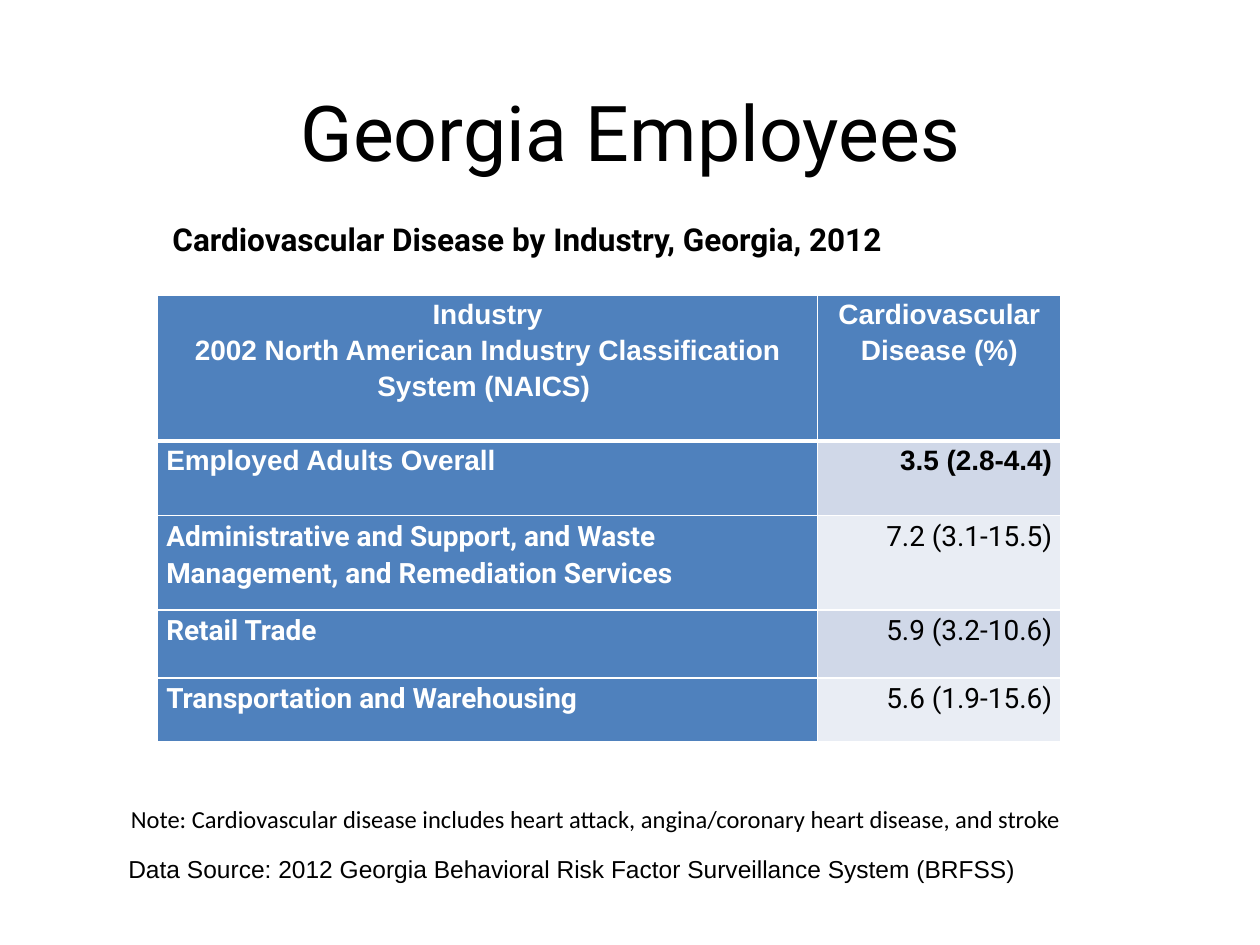
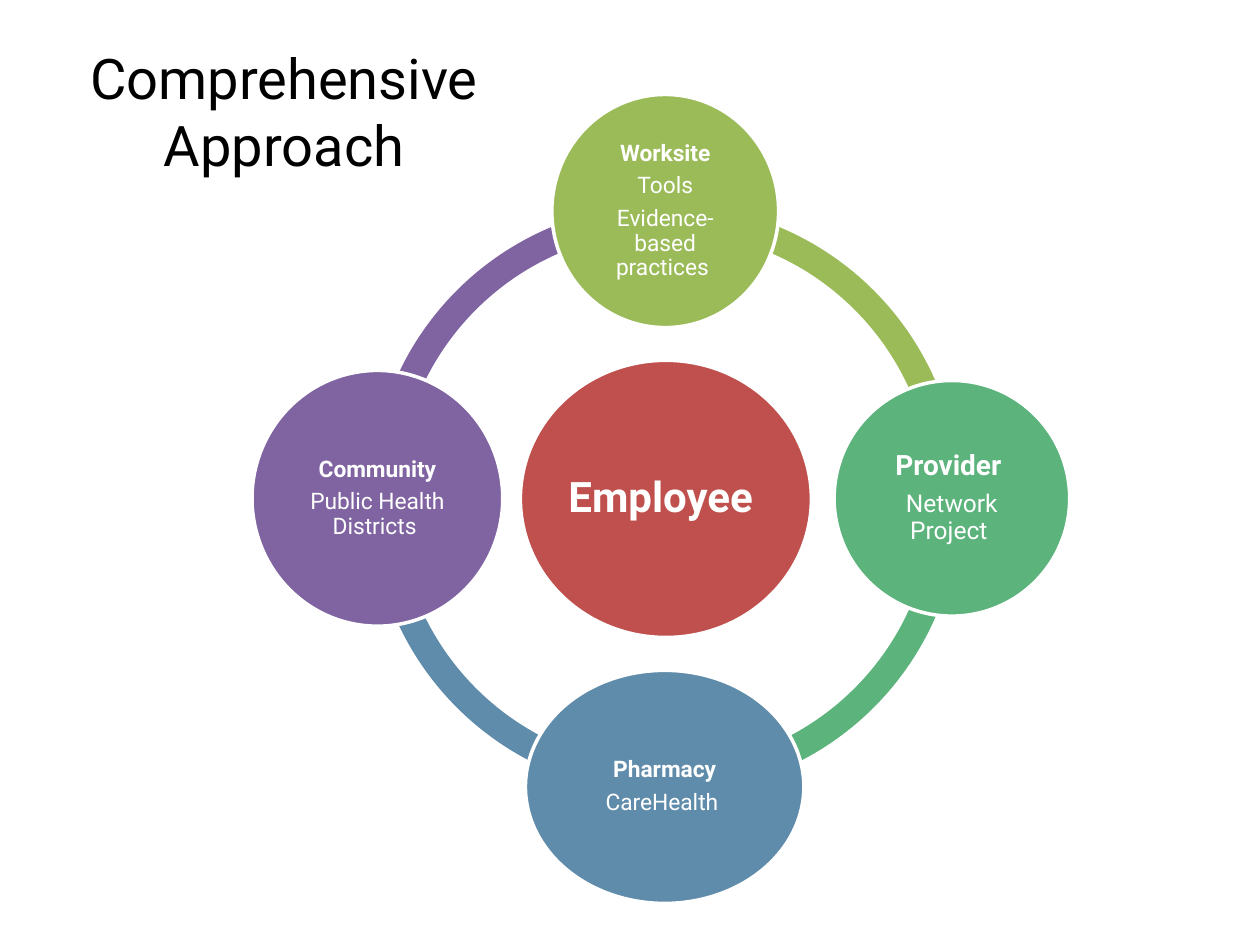
"""Builds two slides on cardiovascular disease among Georgia employees."""
from dataclasses import dataclass

from lxml import etree
from pptx import Presentation
from pptx import util as u
from pptx.dml import color
from pptx.enum import shapes, text
from pptx.oxml import ns

Inches = u.Inches
ALIGN = text.PP_ALIGN

COLORS = {
    "ink": "000000",
    "white": "FFFFFF",
    "header": "4F81BD",
    "band_dark": "D0D8E8",
    "band_light": "E9EDF4",
    "employee": "C0504D",
    "worksite": "9BBB59",
    "provider": "5CB37C",
    "pharmacy": "608CAB",
    "community": "8064A2",
}


@dataclass(frozen=True)
class Style:
    size: float
    font: str = "Roboto"
    color: str = "ink"
    bold: bool = False


@dataclass(frozen=True)
class Caption:
    wording: str
    box: tuple[float, float, float, float]
    style: Style


@dataclass(frozen=True)
class Industry:
    name: str
    rate: str
    height: float
    font: str = "Roboto"
    bold_rate: bool = False


@dataclass(frozen=True)
class Partner:
    lines: tuple[str, ...]
    box: tuple[float, float, float, float]
    color: str
    heading_size: float = 13
    detail_size: float = 13


CAPTIONS = (
    Caption("Cardiovascular Disease by Industry, Georgia, 2012",
            (1.27, 1.7, 6.58, 0.4), Style(18, bold=True)),
    Caption("Note: Cardiovascular disease includes heart attack, "
            "angina/coronary heart disease, and stroke",
            (0.94, 6.33, 7.71, 0.34), Style(14, "Calibri")),
    Caption("Data Source: 2012 Georgia Behavioral Risk Factor "
            "Surveillance System (BRFSS)",
            (0.92, 6.73, 8.33, 0.34), Style(14, "Arial")),
)

TABLE_HEADINGS = (
    "Industry\n2002 North American Industry Classification System (NAICS) ",
    "Cardiovascular Disease (%)",
)
COLUMN_WIDTHS = (5.24, 1.93)
HEADER_HEIGHT = 1.16
INDUSTRIES = (
    Industry("Employed Adults Overall", "3.5 (2.8-4.4)", 0.59, "Arial", True),
    Industry("Administrative and Support, and Waste Management, "
             "and Remediation Services", "7.2 (3.1-15.5)", 0.75),
    Industry("Retail Trade", "5.9 (3.2-10.6)", 0.54),
    Industry("Transportation and Warehousing", "5.6 (1.9-15.6)", 0.51),
)

RING_BOX = (2.94, 1.62, 4.68, 4.68)
RING_THICKNESS = 0.046
RING_COLORS = ("provider", "pharmacy", "community", "worksite")
PARTNERS = (
    Partner(("Employee ",), (4.13, 2.86, 2.31, 2.2), "employee", 24),
    Partner(("Worksite", "Tools", "Evidence-based practices "),
            (4.38, 0.75, 1.8, 1.85), "worksite"),
    Partner(("Provider ", "Network Project "),
            (6.62, 3.02, 1.87, 1.87), "provider", 16, 14),
    Partner(("Pharmacy", "CareHealth "),
            (4.17, 5.32, 2.21, 1.85), "pharmacy"),
    Partner(("Community", "Public Health Districts "),
            (2, 2.94, 1.99, 2.03), "community"),
)


def rgb(name: str) -> color.RGBColor:
    """Return the named palette colour."""
    return color.RGBColor.from_string(COLORS[name])


def inches(box: tuple[float, ...]) -> list[int]:
    """Convert a box to lengths."""
    return [Inches(value) for value in box]


def style_paragraph(paragraph, style: Style, align: ALIGN) -> None:
    """Align a paragraph and format its runs."""
    paragraph.alignment = align
    for run in paragraph.runs:
        run.font.size = u.Pt(style.size)
        run.font.name = style.font
        run.font.bold = style.bold
        run.font.color.rgb = rgb(style.color)


def add_titled_slide(deck, title: str, box: tuple[float, ...], size: float):
    """Add a slide with a placed, centred title."""
    slide = deck.slides.add_slide(deck.slide_layouts[5])
    heading = slide.shapes.title
    heading.left, heading.top, heading.width, heading.height = inches(box)
    heading.text_frame.text = title
    heading.text_frame.vertical_anchor = text.MSO_ANCHOR.MIDDLE
    style_paragraph(heading.text_frame.paragraphs[0], Style(size), ALIGN.CENTER)
    return slide


def add_caption(slide, caption: Caption) -> None:
    """Add one line of text above or below the table."""
    frame = slide.shapes.add_textbox(*inches(caption.box)).text_frame
    frame.word_wrap = True
    frame.text = caption.wording
    style_paragraph(frame.paragraphs[0], caption.style, ALIGN.LEFT)


def set_borders(cell, top: float, bottom: float) -> None:
    """Draw white cell borders with the given top and bottom widths."""
    properties = cell._tc.get_or_add_tcPr()
    for side, width in (("L", 1), ("R", 1), ("T", top), ("B", bottom)):
        line = etree.SubElement(properties, ns.qn(f"a:ln{side}"), w=str(u.Pt(width)))
        fill = etree.SubElement(line, ns.qn("a:solidFill"))
        etree.SubElement(fill, ns.qn("a:srgbClr"), val=COLORS["white"])


def fill_cell(cell, wording: str, fill: str, style: Style, align: ALIGN,
              top: float = 1, bottom: float = 1) -> None:
    """Write and format one table cell."""
    set_borders(cell, top, bottom)
    cell.fill.solid()
    cell.fill.fore_color.rgb = rgb(fill)
    cell.margin_left = cell.margin_right = Inches(0.07)
    cell.margin_top = cell.margin_bottom = 0
    cell.text_frame.text = wording
    for paragraph in cell.text_frame.paragraphs:
        paragraph.line_spacing = 1.15
        style_paragraph(paragraph, style, align)


def add_industry_table(slide) -> None:
    """Add the table of disease rates by industry."""
    heights = (HEADER_HEIGHT, *(industry.height for industry in INDUSTRIES))
    table = slide.shapes.add_table(
        len(heights), len(COLUMN_WIDTHS),
        *inches((1.25, 2.34, sum(COLUMN_WIDTHS), sum(heights)))).table
    for column, width in zip(table.columns, COLUMN_WIDTHS):
        column.width = Inches(width)
    for row, height in zip(table.rows, heights):
        row.height = Inches(height)
    for index, heading in enumerate(TABLE_HEADINGS):
        fill_cell(table.cell(0, index), heading, "header",
                  Style(16, "Arial", "white", True), ALIGN.CENTER, bottom=3)
    for index, industry in enumerate(INDUSTRIES, 1):
        top = 3 if index == 1 else 1
        band = "band_dark" if index % 2 else "band_light"
        fill_cell(table.cell(index, 0), industry.name, "header",
                  Style(16, industry.font, "white", True), ALIGN.LEFT, top)
        fill_cell(table.cell(index, 1), industry.rate, band,
                  Style(16, industry.font, bold=industry.bold_rate),
                  ALIGN.RIGHT, top)


def add_filled_shape(slide, preset, box: tuple[float, ...], fill: str):
    """Add a flat shape without outline."""
    shape = slide.shapes.add_shape(preset, *inches(box))
    shape.shadow.inherit = False
    shape.fill.solid()
    shape.fill.fore_color.rgb = rgb(fill)
    shape.line.fill.background()
    return shape


def add_ring(slide) -> None:
    """Add the four quarter arcs, clockwise from the right."""
    for quarter, fill in enumerate(RING_COLORS):
        arc = add_filled_shape(slide, shapes.MSO_SHAPE.BLOCK_ARC, RING_BOX, fill)
        arc.adjustments[0] = quarter * 54
        arc.adjustments[1] = (quarter + 1) % 4 * 54
        arc.adjustments[2] = RING_THICKNESS


def add_partner(slide, partner: Partner) -> None:
    """Add a labelled circle."""
    circle = add_filled_shape(slide, shapes.MSO_SHAPE.OVAL, partner.box, partner.color)
    circle.line.color.rgb = rgb("white")
    circle.line.width = u.Pt(2)
    frame = circle.text_frame
    frame.word_wrap = True
    frame.vertical_anchor = text.MSO_ANCHOR.MIDDLE
    frame.margin_left = frame.margin_right = Inches(0.02)
    frame.margin_top = frame.margin_bottom = Inches(0.02)
    frame.text = "\n".join(partner.lines)
    for index, paragraph in enumerate(frame.paragraphs):
        size = partner.detail_size if index else partner.heading_size
        paragraph.line_spacing = 0.9
        paragraph.space_after = u.Pt(size * 0.35)
        style_paragraph(paragraph, Style(size, color="white", bold=index == 0),
                        ALIGN.CENTER)


def main() -> None:
    """Build and save the deck."""
    deck = Presentation()
    deck.slide_width, deck.slide_height = Inches(10), Inches(7.5)

    employees = add_titled_slide(deck, "Georgia Employees", (0.17, 0.5, 9.67, 1.08), 44)
    add_industry_table(employees)
    for caption in CAPTIONS:
        add_caption(employees, caption)

    approach = add_titled_slide(deck, "Comprehensive Approach",
                                (0.17, 0.17, 4.17, 1.42), 32)
    add_ring(approach)
    for partner in PARTNERS:
        add_partner(approach, partner)

    deck.save("out.pptx")


if __name__ == "__main__":
    main()
